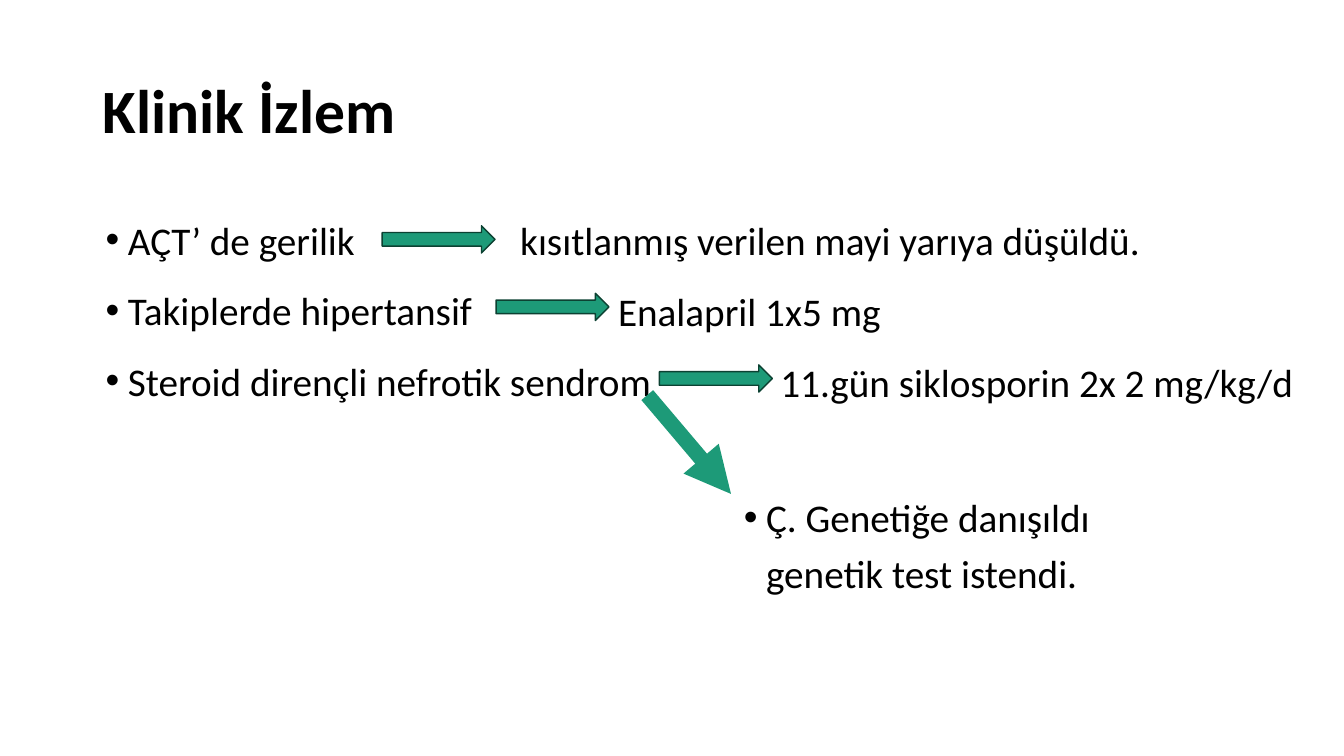
from pptx import Presentation
from pptx.dml.color import RGBColor as RGB
from pptx.enum.shapes import MSO_CONNECTOR as Line, MSO_SHAPE as Shape
from pptx.enum.text import MSO_ANCHOR as Anchor, PP_ALIGN as Align
from pptx.oxml.ns import qn
from pptx.util import Inches, Pt
from lxml.etree import SubElement as Sub

# Content: finding, arrow left and top, outcome, outcome left
TITLE = "Klinik İzlem"
ROWS = [
    ("AÇT’ de gerilik", 3.79, 2.24,
     "kısıtlanmış verilen mayi yarıya düşüldü.", 5.16),
    ("Takiplerde hipertansif", 4.92, 2.91, "Enalapril 1x5 mg", 6.13),
    ("Steroid dirençli nefrotik sendrom", 6.54, 3.62,
     "11.gün siklosporin 2x 2 mg/kg/d", 7.74),
]
NOTE = "Ç. Genetiğe danışıldı genetik test istendi."


class Theme:
    font = "Calibri"
    ink = RGB.from_string("000000")
    green = RGB.from_string("1D9A78")
    edge = RGB.from_string("0C4132")
    head, body = Pt(44), Pt(28)
    lead, gap = 1.2, 10


WIDE, TOP = 13.33, 2
# Line height plus paragraph gap, in inches
PITCH = (Theme.body.pt * 1.22 * Theme.lead + Theme.gap) / 72


def style(para, size, bold=False):
    for run in para.runs:
        font = run.font
        font.name, font.size, font.bold = Theme.font, size, bold
        font.color.rgb = Theme.ink


def bullet(para):
    props = para._p.get_or_add_pPr()
    props.set("marL", str(Inches(0.25)))
    props.set("indent", str(Inches(-0.22)))
    Sub(Sub(props, qn("a:buClr")), qn("a:srgbClr")).set("val", str(Theme.ink))
    Sub(props, qn("a:buFont")).set("typeface", "Arial")
    Sub(props, qn("a:buChar")).set("char", "•")


def add_text(slide, lines, box, dots=True):
    frame = slide.shapes.add_textbox(*map(Inches, box)).text_frame
    frame.word_wrap = True
    frame.text = "\n".join(lines)
    for i, para in enumerate(frame.paragraphs):
        if dots:
            bullet(para)
        para.line_spacing = Theme.lead
        para.space_before = Pt(Theme.gap if i else 0)
        style(para, Theme.body)
    return frame


def add_arrow(slide, left, top):
    box = map(Inches, (left, top, 1.12, 0.27))
    arrow = slide.shapes.add_shape(Shape.RIGHT_ARROW, *box)
    arrow.shadow.inherit = False
    arrow.fill.solid()
    arrow.fill.fore_color.rgb = Theme.green
    arrow.line.color.rgb = Theme.edge
    arrow.line.width = Pt(1)


def main():
    deck = Presentation()
    deck.slide_width, deck.slide_height = Inches(WIDE), Inches(7.5)
    slide = deck.slides.add_slide(deck.slide_layouts[5])

    # Title
    title = slide.shapes.title
    title.left, title.top = Inches(0.92), Inches(0.4)
    title.width, title.height = Inches(11.5), Inches(1.45)
    frame = title.text_frame
    frame.text, frame.vertical_anchor = TITLE, Anchor.MIDDLE
    para = frame.paragraphs[0]
    para.alignment, para.line_spacing = Align.LEFT, 0.9
    style(para, Theme.head, True)

    # Findings, each with an arrow to its outcome
    add_text(slide, [row[0] for row in ROWS], (0.92, TOP, 5.75, 2.2))
    for i, (_, left, top, result, edge) in enumerate(ROWS):
        box = (edge, TOP + i * PITCH, WIDE - edge, 0.67)
        frame = add_text(slide, [result], box, dots=False)
        frame.margin_left = frame.margin_right = 0
        add_arrow(slide, left, top)

    # Slanted arrow to the genetics note
    ends = map(Inches, (6.42, 3.92, 7.25, 4.9))
    link = slide.shapes.add_connector(Line.STRAIGHT, *ends)
    link.line.color.rgb, link.line.width = Theme.green, Pt(11)
    Sub(link.line._get_or_add_ln(), qn("a:tailEnd")).set("type", "triangle")
    Sub(link._element.spPr, qn("a:effectLst"))
    add_text(slide, [NOTE], (7.25, 4.75, 4.75, 1.19))

    deck.save("out.pptx")


if __name__ == "__main__":
    main()
